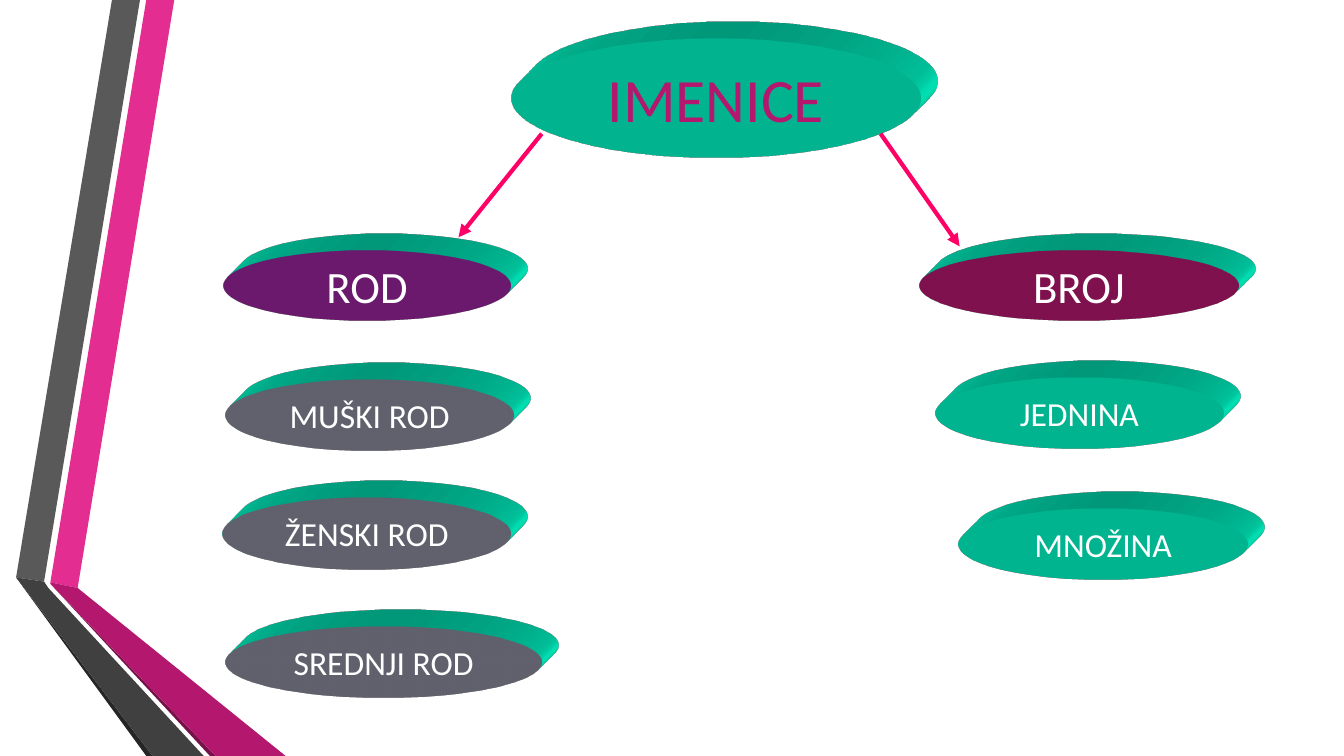
from lxml import etree
from pptx import Presentation
from pptx.dml.color import RGBColor
from pptx.enum.shapes import MSO_CONNECTOR, MSO_SHAPE
from pptx.enum.text import MSO_ANCHOR, PP_ALIGN
from pptx.oxml.ns import qn
from pptx.util import Pt

ELLIPSE = MSO_SHAPE.OVAL
STRAIGHT = MSO_CONNECTOR.STRAIGHT
MIDDLE = MSO_ANCHOR.MIDDLE
CENTER = PP_ALIGN.CENTER

THEME = {
    "font": "Calibri",
    "title": 44, "heading": 32, "item": 24,
    "mint": "00FFCC", "purple": "962499", "magenta": "B4186E", "slate": "8A8A9C",
    "white": "FFFFFF", "arrow": "FF0066",
    "pink": "E32D91", "pink_edge": "781049",
    "grey": "595959", "grey_fold": "404040", "grey_edge": "262626",
}
DEPTH = Pt(34)


def color(name):
    return RGBColor.from_string(THEME[name])


def extrude(shape):
    """Give the shape a mint rim that runs up and to the right."""
    properties = shape._element.spPr
    scene = etree.SubElement(properties, qn("a:scene3d"))
    etree.SubElement(scene, qn("a:camera"), prst="legacyObliqueTopRight")
    etree.SubElement(scene, qn("a:lightRig"), rig="legacyFlat3", dir="b")
    solid = etree.SubElement(properties, qn("a:sp3d"), extrusionH=str(DEPTH),
                             prstMaterial="legacyMatte")
    for bevel in ("a:bevelT", "a:bevelB"):
        etree.SubElement(solid, qn(bevel), w="13500", h="13500", prst="angle")
    rim = etree.SubElement(solid, qn("a:extrusionClr"))
    etree.SubElement(rim, qn("a:srgbClr"), val=THEME["mint"])


deck = Presentation()
deck.slide_width, deck.slide_height = Pt(960), Pt(540)
page = deck.slides.add_slide(deck.slide_layouts[6])

# Folded ribbons along the left edge
ribbons = [
    ("pink", [(36, 416), (55.5, 420), (124.5, 0), (104.5, 0)]),
    ("grey", [(100, 0), (80, 0), (11.5, 412.5), (31.5, 415.5)]),
    ("grey_edge", [(11.5, 412.5), (104.5, 540), (109, 540)]),
    ("pink_edge", [(36, 417), (150, 540), (154, 540)]),
    ("magenta", [(36, 417), (154, 540), (204, 540), (55.5, 420), (36, 416)]),
    ("grey_fold", [(145.5, 540), (34.5, 420), (31.5, 415.5), (11.5, 412.5), (109, 540)]),
]
for fill, points in ribbons:
    builder = page.shapes.build_freeform(
        Pt(points[0][0]), Pt(points[0][1]), scale=1.0)
    builder.add_line_segments([(Pt(x), Pt(y)) for x, y in points[1:]], close=True)
    ribbon = builder.convert_to_shape()
    ribbon.shadow.inherit = False
    ribbon.fill.solid()
    ribbon.fill.fore_color.rgb = color(fill)
    ribbon.line.fill.background()

# Raised ellipses: text, left, top, width, height, fill, line, type size, text colour
ellipses = [
    ("IMENICE", 365.5, 27.5, 292, 85, "mint", None, "title", "magenta"),
    ("ROD", 160, 178.5, 204.5, 50.5, "purple", None, "heading", "white"),
    ("BROJ", 657, 178.5, 227.5, 50.5, "magenta", None, "heading", "white"),
    ("MUŠKI ROD", 161, 271, 206, 51, "slate", None, "item", "white"),
    ("ŽENSKI ROD", 159, 355.5, 206, 51, "slate", None, "item", "white"),
    ("SREDNJI ROD", 161, 447.5, 226, 51, "slate", None, "item", "white"),
    ("JEDNINA", 668, 269.5, 206, 51, "mint", "magenta", "item", "white"),
    ("MNOŽINA", 685, 363, 206, 51, "mint", "purple", "item", "white"),
]
for text, left, top, width, height, fill, line, size, text_color in ellipses:
    ellipse = page.shapes.add_shape(ELLIPSE, Pt(left), Pt(top), Pt(width), Pt(height))
    ellipse.shadow.inherit = False
    ellipse.fill.solid()
    ellipse.fill.fore_color.rgb = color(fill)
    if line:
        ellipse.line.color.rgb = color(line)
        ellipse.line.width = Pt(2.25)
    else:
        ellipse.line.fill.background()
    extrude(ellipse)
    frame = ellipse.text_frame
    frame.word_wrap = False
    frame.vertical_anchor = MIDDLE
    para = frame.paragraphs[0]
    para.text = text
    para.alignment = CENTER
    para.font.name = THEME["font"]
    para.font.size = Pt(THEME[size])
    para.font.color.rgb = color(text_color)

# Arrows from the title to the two headings
for x1, y1, x2, y2 in ((387, 95.5, 327.5, 169.5), (629, 95.5, 685.5, 176)):
    arrow = page.shapes.add_connector(STRAIGHT, Pt(x1), Pt(y1), Pt(x2), Pt(y2))
    arrow.line.color.rgb = color("arrow")
    arrow.line.width = Pt(3)
    etree.SubElement(arrow.line._get_or_add_ln(), qn("a:tailEnd"), type="triangle")
    etree.SubElement(arrow._element.spPr, qn("a:effectLst"))

deck.save("out.pptx")
